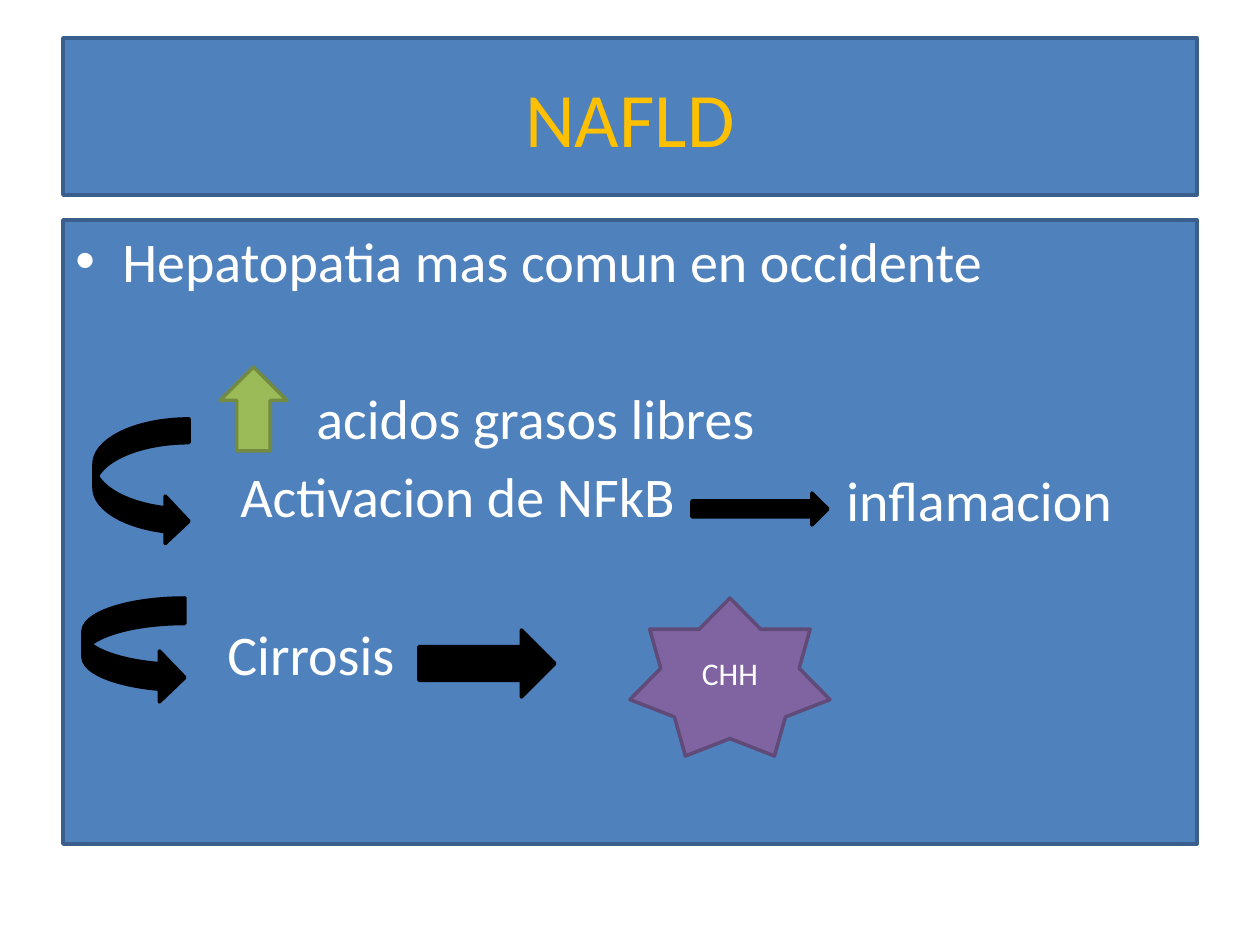
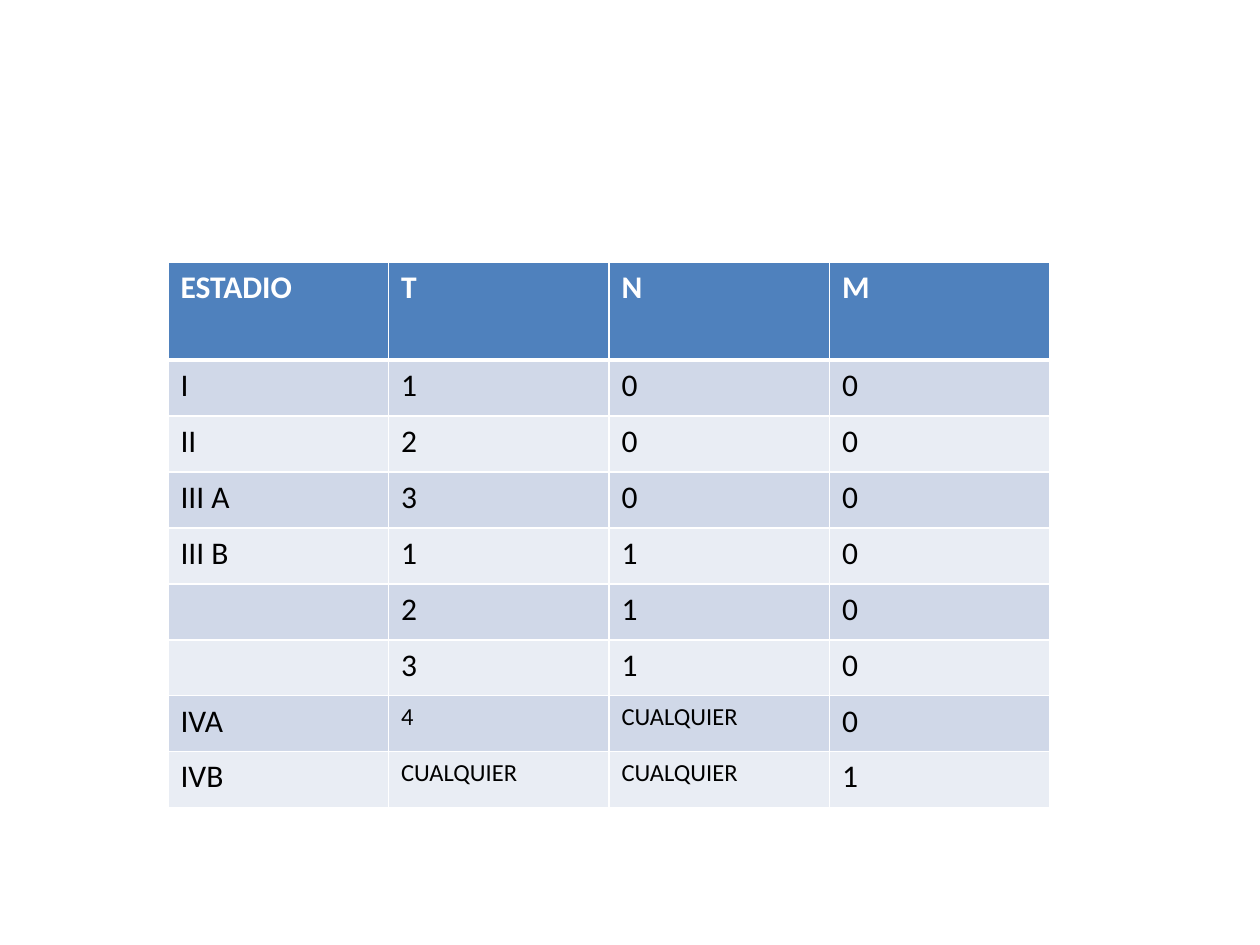
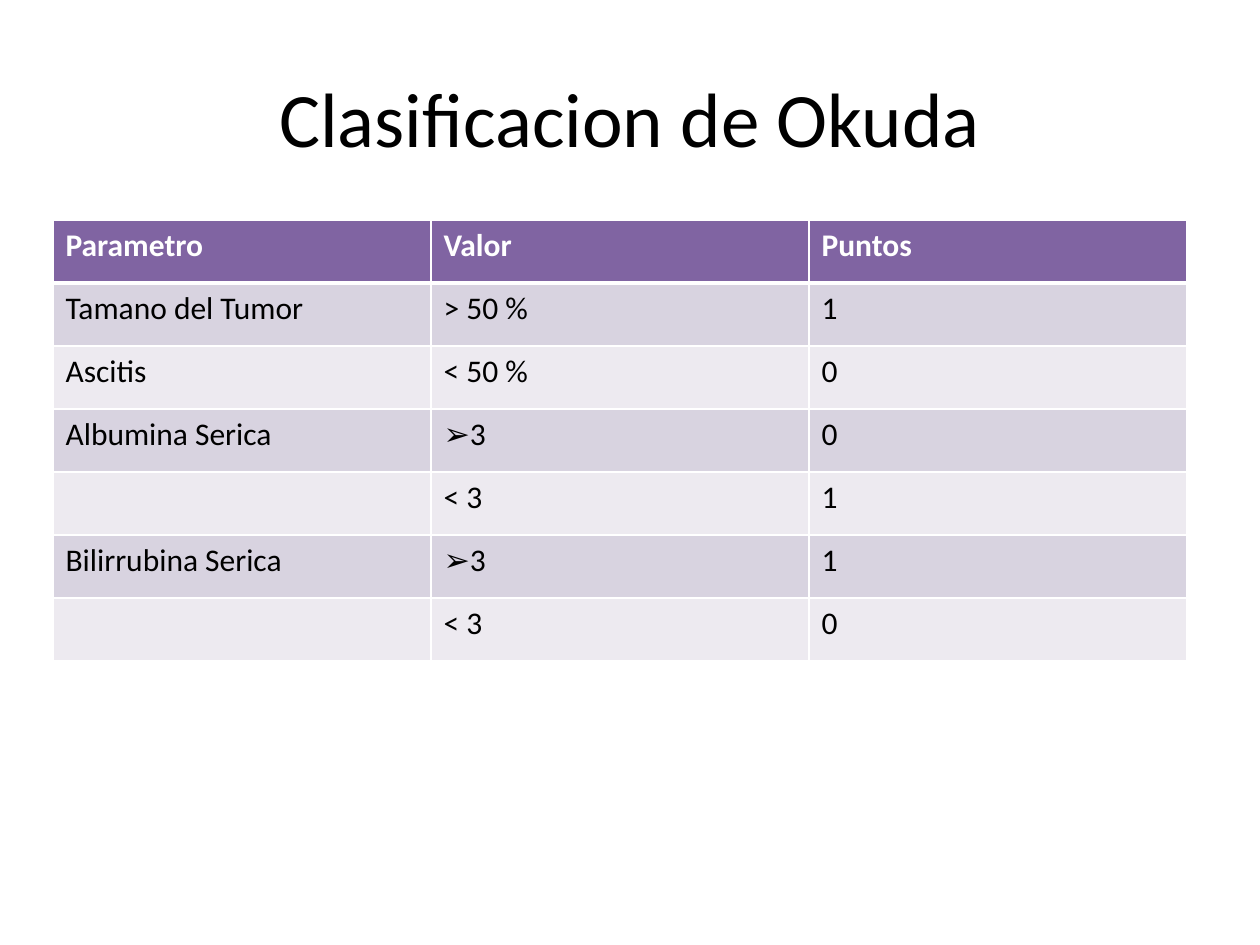
"""Build three slides on NAFLD and the staging of liver tumours."""
from lxml.etree import SubElement
from pptx import Presentation
from pptx.dml.color import RGBColor
from pptx.enum.shapes import MSO_SHAPE
from pptx.enum.text import MSO_ANCHOR, PP_ALIGN
from pptx.oxml.ns import qn
from pptx.util import Emu, Pt

FONT = "Calibri"
BULLET_FONT = "Arial"
COLORS = {
    "white": "FFFFFF", "black": "000000", "gold": "FFC000",
    "blue": "4F81BD", "blue_edge": "3A5F8C", "blue_band": "D0D8E8", "blue_pale": "E9EDF4",
    "green": "9BBB59", "green_edge": "738A42",
    "purple": "8064A2", "purple_edge": "5F4A78", "purple_band": "D8D3E0", "purple_pale": "EDEAF0",
}

SLIDE_SIZE = (1260, 945)
TITLE_BOX = (63, 38, 1134, 157)
BODY_BOX = (63, 220, 1134, 624)

NAFLD_TITLE = "NAFLD"
BULLET_INDENT = 47
NAFLD_LINES = [
    ("Hepatopatia mas comun en occidente", 0, 0),
    ("acidos grasos libres", 241, 51.5),
    ("Activacion de NFkB", 165, 6.4),
    ("Cirrosis", 152, 51.5),
]
INFLAMMATION = "inflamacion"
INFLAMMATION_BOX = (834, 465, 320, 68)
NAFLD_SYMBOLS = [
    (MSO_SHAPE.UP_ARROW, (220, 367, 67, 84), "green", "green_edge", ""),
    (MSO_SHAPE.RIGHT_ARROW, (692, 493, 136, 32), "black", "black", ""),
    (MSO_SHAPE.CURVED_RIGHT_ARROW, (94, 419, 95, 126), "black", "black", ""),
    (MSO_SHAPE.CURVED_RIGHT_ARROW, (83, 598, 102, 105), "black", "black", ""),
    (MSO_SHAPE.RIGHT_ARROW, (419, 630, 136, 67), "black", "black", ""),
    (MSO_SHAPE.STAR_7_POINT, (630, 598, 200, 158), "purple", "purple_edge", "CHH"),
]

STAGES = [
    ("ESTADIO", "T", "N", "M"),
    ("I", "1", "0", "0"),
    ("II", "2", "0", "0"),
    ("III A", "3", "0", "0"),
    ("III B", "1", "1", "0"),
    ("", "2", "1", "0"),
    ("", "3", "1", "0"),
    ("IVA", "4", "CUALQUIER", "0"),
    ("IVB", "CUALQUIER", "CUALQUIER", "1"),
]
SMALL_ENTRIES = {"4", "CUALQUIER"}

OKUDA_TITLE = "Clasificacion de Okuda"
ARROW_BULLET = "➢"
OKUDA = [
    ("Parametro", "Valor", "Puntos"),
    ("Tamano del Tumor", "> 50 %", "1"),
    ("Ascitis", "< 50 %", "0"),
    ("Albumina Serica", "➢3", "0"),
    ("", "< 3", "1"),
    ("Bilirrubina Serica", "➢3", "1"),
    ("", "< 3", "0"),
]


def px(length):
    return Emu(round(length * 914400 / 126))


def rgb(color):
    return RGBColor.from_string(COLORS[color])


def add_run(paragraph, text, size, color, bold=False):
    run = paragraph.add_run()
    run.text = text
    run.font.name = FONT
    run.font.size = Pt(size)
    run.font.bold = bold
    run.font.color.rgb = rgb(color)


def set_bullet(paragraph, mark):
    properties = paragraph._p.get_or_add_pPr()
    SubElement(properties, qn("a:buFont"), typeface=BULLET_FONT)
    SubElement(properties, qn("a:buChar"), char=mark)


def add_figure(slide, preset, box, fill, edge):
    figure = slide.shapes.add_shape(preset, *map(px, box))
    figure.shadow.inherit = False
    figure.fill.solid()
    figure.fill.fore_color.rgb = rgb(fill)
    figure.line.color.rgb = rgb(edge)
    figure.line.width = Pt(2)
    return figure


def write_line(shape, text, size, color, alignment=PP_ALIGN.CENTER):
    frame = shape.text_frame
    frame.word_wrap = True
    frame.vertical_anchor = MSO_ANCHOR.MIDDLE
    frame.paragraphs[0].alignment = alignment
    add_run(frame.paragraphs[0], text, size, color)


def write_body(panel):
    frame = panel.text_frame
    frame.word_wrap = True
    frame.vertical_anchor = MSO_ANCHOR.TOP
    for number, (text, indent, space) in enumerate(NAFLD_LINES):
        paragraph = frame.add_paragraph() if number else frame.paragraphs[0]
        paragraph.alignment = PP_ALIGN.LEFT
        paragraph.space_before = Pt(space)
        properties = paragraph._p.get_or_add_pPr()
        margin = 0 if indent else BULLET_INDENT
        properties.set("marL", str(px(margin)))
        properties.set("indent", str(px(indent or -BULLET_INDENT)))
        if not indent:
            set_bullet(paragraph, "•")
        add_run(paragraph, text, 32, "white")


def set_borders(cell, top, bottom):
    properties = cell._tc.get_or_add_tcPr()
    for side, width in (("L", 1), ("R", 1), ("T", top), ("B", bottom)):
        line = SubElement(properties, qn(f"a:ln{side}"), w=str(Pt(width)))
        fill = SubElement(line, qn("a:solidFill"))
        SubElement(fill, qn("a:srgbClr"), val=COLORS["white"])


def add_grid(slide, rows, left, top, width, head_height, row_height, hue, small=()):
    heights = [head_height] + [row_height] * (len(rows) - 1)
    columns = len(rows[0])
    table = slide.shapes.add_table(
        len(rows), columns, px(left), px(top), px(width), px(sum(heights))
    ).table
    for column in table.columns:
        column.width = px(width / columns)
    for r, entries in enumerate(rows):
        table.rows[r].height = px(heights[r])
        shade = hue if r == 0 else hue + ("_band" if r % 2 else "_pale")
        for c, entry in enumerate(entries):
            cell = table.cell(r, c)
            set_borders(cell, 3 if r == 1 else 1, 3 if r == 0 else 1)
            cell.fill.solid()
            cell.fill.fore_color.rgb = rgb(shade)
            paragraph = cell.text_frame.paragraphs[0]
            if entry.startswith(ARROW_BULLET):
                set_bullet(paragraph, ARROW_BULLET)
            if entry:
                add_run(paragraph, entry.removeprefix(ARROW_BULLET),
                        14 if entry in small else 18,
                        "black" if r else "white", bold=r == 0)


def build_nafld(slide):
    heading = add_figure(slide, MSO_SHAPE.RECTANGLE, TITLE_BOX, "blue", "blue_edge")
    write_line(heading, NAFLD_TITLE, 44, "gold")
    write_body(add_figure(slide, MSO_SHAPE.RECTANGLE, BODY_BOX, "blue", "blue_edge"))
    outcome = slide.shapes.add_textbox(*map(px, INFLAMMATION_BOX))
    write_line(outcome, INFLAMMATION, 32, "white", PP_ALIGN.LEFT)
    for preset, box, fill, edge, label in NAFLD_SYMBOLS:
        symbol = add_figure(slide, preset, box, fill, edge)
        if label:
            write_line(symbol, label, 18, "white")


def build_stages(slide):
    add_grid(slide, STAGES, 168, 262, 882, 98, 56, "blue", SMALL_ENTRIES)


def build_okuda(slide):
    heading = slide.shapes.add_textbox(*map(px, TITLE_BOX))
    write_line(heading, OKUDA_TITLE, 44, "black")
    add_grid(slide, OKUDA, 53, 220, 1134, 63, 63, "purple")


def main():
    deck = Presentation()
    deck.slide_width, deck.slide_height = map(px, SLIDE_SIZE)
    for build in (build_nafld, build_stages, build_okuda):
        build(deck.slides.add_slide(deck.slide_layouts[6]))
    deck.save("out.pptx")


if __name__ == "__main__":
    main()
